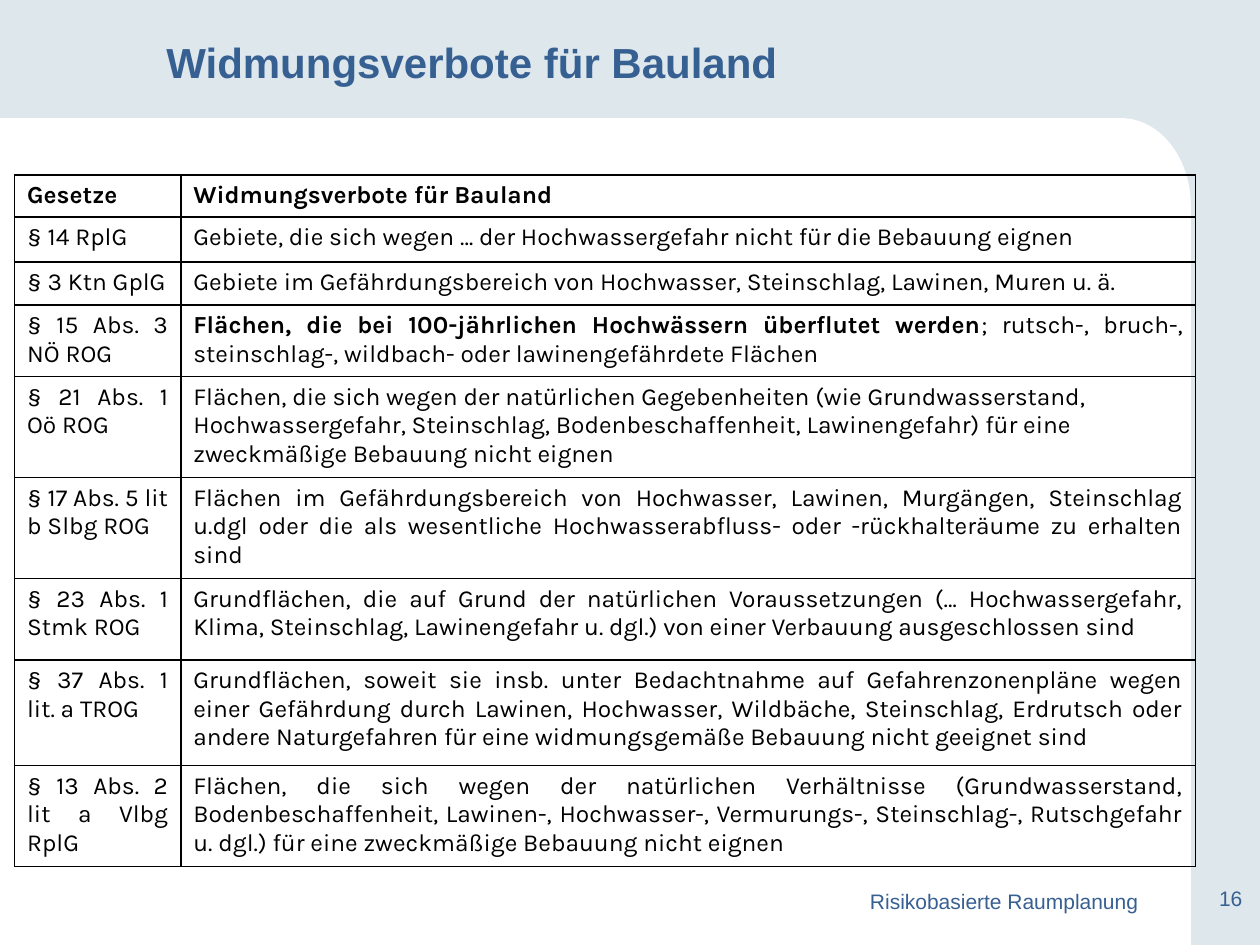
"""Build the slide listing zoning bans for building land by state law."""
from typing import NamedTuple

from lxml import etree
from pptx import Presentation
from pptx.dml.color import RGBColor
from pptx.enum.shapes import MSO_SHAPE
from pptx.enum.text import MSO_ANCHOR, PP_ALIGN
from pptx.oxml.ns import qn
from pptx.slide import Slide
from pptx.table import _Cell
from pptx.text.text import _Paragraph
from pptx.util import Pt

RECT, OVAL = MSO_SHAPE.RECTANGLE, MSO_SHAPE.OVAL
LEFT, RIGHT, JUSTIFY = PP_ALIGN.LEFT, PP_ALIGN.RIGHT, PP_ALIGN.JUSTIFY
TOP, MIDDLE = MSO_ANCHOR.TOP, MSO_ANCHOR.MIDDLE
BLUE, PALE, WHITE, BLACK = "376092", "DEE7EC", "FFFFFF", "000000"
OUTER, INNER = 0.75, 1


class Box(NamedTuple):
    x: float
    y: float
    w: float
    h: float


class Law(NamedTuple):
    name: str
    ban: str
    height: float
    lead: str = ""
    align: PP_ALIGN = JUSTIFY
    bold: bool = False


PANEL = [
    (RECT, Box(0, 67.5, 641.5, 472.5)),
    (OVAL, Box(600.5, 67.5, 80, 100)),
    (RECT, Box(385, 117, 295.5, 423)),
]
TABLE = Box(8.3, 100, 675, 394.2)
COLUMNS = [95, 580]
LAWS = [
    Law("Gesetze", "Widmungsverbote für Bauland", 23.8, bold=True),
    Law("§ 14 RplG", "Gebiete, die sich wegen … der Hochwassergefahr nicht für die Bebauung eignen", 25.7),
    Law("§ 3 Ktn GplG", "Gebiete im Gefährdungsbereich von Hochwasser, Steinschlag, Lawinen, Muren u. ä.", 24.5),
    Law("§ 15 Abs. 3 NÖ ROG",
        "; rutsch-, bruch-, steinschlag-, wildbach- oder lawinengefährdete Flächen", 41,
        lead="Flächen, die bei 100-jährlichen Hochwässern überflutet werden"),
    Law("§ 21 Abs. 1 Oö ROG",
        "Flächen, die sich wegen der natürlichen Gegebenheiten (wie Grundwasserstand, "
        "Hochwassergefahr, Steinschlag, Bodenbeschaffenheit, Lawinengefahr) für eine "
        "zweckmäßige Bebauung nicht eignen", 57.5, align=LEFT),
    Law("§ 17 Abs. 5 lit b Slbg ROG",
        "Flächen im Gefährdungsbereich von Hochwasser, Lawinen, Murgängen, Steinschlag u.dgl "
        "oder die als wesentliche Hochwasserabfluss- oder -rückhalteräume zu erhalten sind", 57.5),
    Law("§ 23 Abs. 1 Stmk ROG",
        "Grundflächen, die auf Grund der natürlichen Voraussetzungen (… Hochwassergefahr, Klima, "
        "Steinschlag, Lawinengefahr u. dgl.) von einer Verbauung ausgeschlossen sind", 46.5),
    Law("§ 37 Abs. 1 lit. a TROG",
        "Grundflächen, soweit sie insb. unter Bedachtnahme auf Gefahrenzonenpläne wegen einer "
        "Gefährdung durch Lawinen, Hochwasser, Wildbäche, Steinschlag, Erdrutsch oder andere "
        "Naturgefahren für eine widmungsgemäße Bebauung nicht geeignet sind", 60.5),
    Law("§ 13 Abs. 2 lit a Vlbg RplG",
        "Flächen, die sich wegen der natürlichen Verhältnisse (Grundwasserstand, "
        "Bodenbeschaffenheit, Lawinen-, Hochwasser-, Vermurungs-, Steinschlag-, Rutschgefahr "
        "u. dgl.) für eine zweckmäßige Bebauung nicht eignen", 57.2),
]


def rgb(color: str) -> RGBColor:
    """Turn a hex string into a colour."""
    return RGBColor.from_string(color)


def points(box: Box) -> list[Pt]:
    """Turn a box into four lengths."""
    return [Pt(v) for v in box]


def write(p: _Paragraph, text: str, *, size: float = 14, font: str = "Karla",
          color: str = BLACK, bold: bool = False, align: PP_ALIGN = JUSTIFY) -> None:
    """Add a formatted run to a paragraph."""
    p.alignment = align
    r = p.add_run()
    r.text = text
    r.font.size, r.font.name, r.font.bold = Pt(size), font, bold
    r.font.color.rgb = rgb(color)


def add_panel(s: Slide, kind: MSO_SHAPE, box: Box) -> None:
    """Draw one white part of the content panel."""
    sp = s.shapes.add_shape(kind, *points(box))
    sp.shadow.inherit = False
    sp.fill.solid()
    sp.fill.fore_color.rgb = rgb(WHITE)
    sp.line.fill.background()


def add_label(s: Slide, box: Box, text: str, *, size: float = 12, bold: bool = False,
              align: PP_ALIGN = RIGHT, anchor: MSO_ANCHOR = TOP, inset: float = 3.6) -> None:
    """Add a blue text box."""
    tf = s.shapes.add_textbox(*points(box)).text_frame
    tf.word_wrap, tf.vertical_anchor, tf.margin_top = True, anchor, Pt(inset)
    write(tf.paragraphs[0], text, size=size, font="Arial", color=BLUE, bold=bold, align=align)


def set_borders(cell: _Cell, **widths: float) -> None:
    """Draw the cell's black borders and leave its fill empty."""
    tc_pr = cell._tc.get_or_add_tcPr()
    for side, width in widths.items():
        ln = etree.SubElement(tc_pr, qn(f"a:ln{side}"), w=str(Pt(width)))
        fill = etree.SubElement(ln, qn("a:solidFill"))
        etree.SubElement(fill, qn("a:srgbClr"), val=BLACK)
    cell.fill.background()


def add_laws(s: Slide) -> None:
    """Add the table of laws and their bans."""
    table = s.shapes.add_table(len(LAWS), len(COLUMNS), *points(TABLE)).table
    table.first_row = table.horz_banding = False
    for column, width in zip(table.columns, COLUMNS):
        column.width = Pt(width)
    for i, law in enumerate(LAWS):
        table.rows[i].height = Pt(law.height)
        name, ban = table.rows[i].cells
        top = INNER if i else OUTER
        set_borders(name, L=OUTER, R=INNER, T=top, B=INNER)
        set_borders(ban, L=INNER, R=OUTER, T=top, B=INNER)
        write(name.text_frame.paragraphs[0], law.name, bold=law.bold)
        p = ban.text_frame.paragraphs[0]
        if law.lead:
            write(p, law.lead, bold=True)
        write(p, law.ban, bold=law.bold, align=law.align)


def main() -> None:
    """Build and save the slide."""
    prs = Presentation()
    prs.slide_width, prs.slide_height = Pt(720), Pt(540)
    s = prs.slides.add_slide(prs.slide_layouts[6])
    s.background.fill.solid()
    s.background.fill.fore_color.rgb = rgb(PALE)
    for kind, box in PANEL:
        add_panel(s, kind, box)
    add_label(s, Box(672, 502.5, 45, 29), "16")
    add_label(s, Box(88, 15, 613, 51), "Widmungsverbote für Bauland",
              size=24, bold=True, align=LEFT, inset=6)
    add_laws(s)
    add_label(s, Box(201.5, 500.5, 459.5, 29), "Risikobasierte Raumplanung ", anchor=MIDDLE)
    prs.save("out.pptx")


if __name__ == "__main__":
    main()
